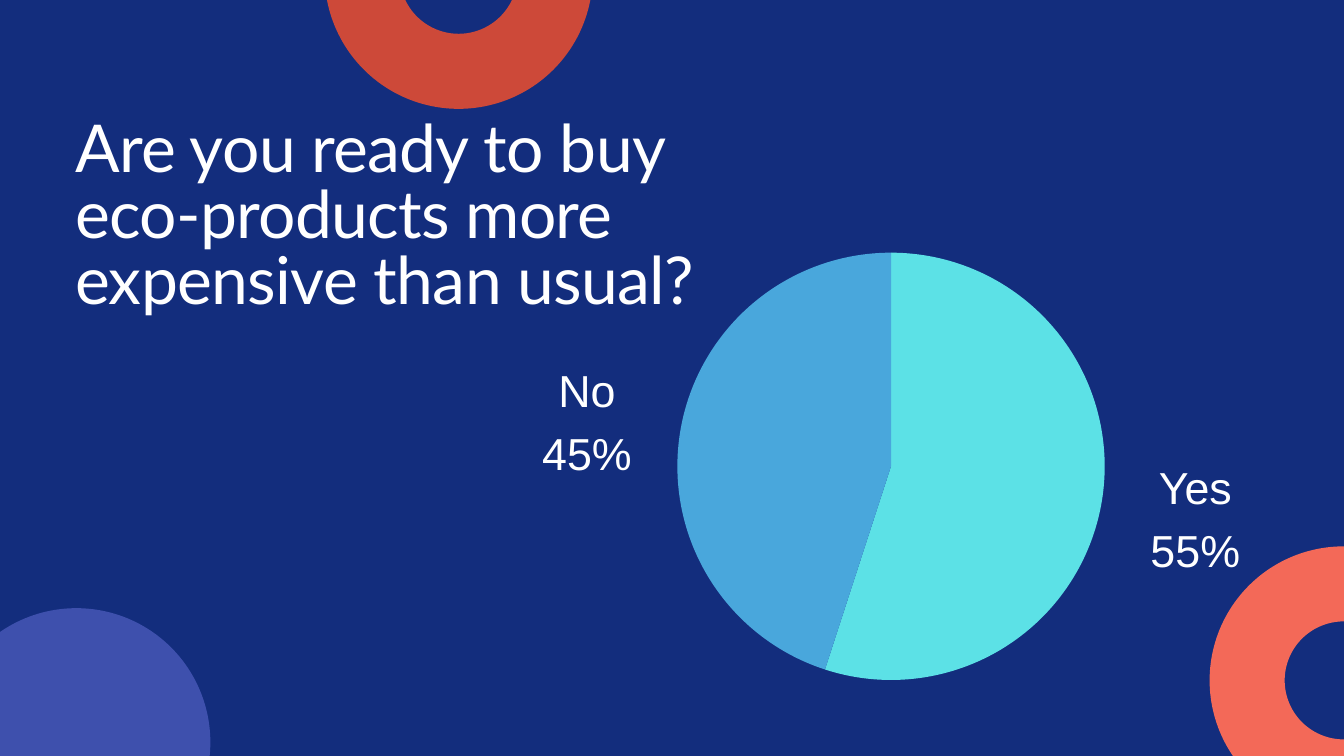
from dataclasses import dataclass
from typing import Any

from lxml.etree import SubElement
from pptx import Presentation
from pptx.chart.data import CategoryChartData
from pptx.dml.color import RGBColor
from pptx.enum.chart import XL_CHART_TYPE
from pptx.enum.shapes import MSO_SHAPE
from pptx.enum.text import MSO_ANCHOR, MSO_AUTO_SIZE, PP_ALIGN
from pptx.oxml.ns import qn
from pptx.util import Inches, Pt

COLORS = {
    "navy": "132D7D",
    "white": "FFFFFF",
    "aqua": "5CE1E6",
    "blue": "49A7DC",
    "brick": "CD4939",
    "coral": "F36958",
    "indigo": "3E50AD",
}
COLS, ROWS = 80, 45  # square grid over the slide
RING_WIDTH = 0.28    # share of the ring's diameter


@dataclass
class Box:
    col: float
    row: float
    cols: float
    rows: float


@dataclass
class Answer:
    name: str
    share: float
    color: str
    box: Box


@dataclass
class Ornament:
    kind: MSO_SHAPE
    color: str
    box: Box


ANSWERS = [
    Answer("Yes", 0.55, "aqua", Box(68.35, 26.84, 5.6, 7.24)),
    Answer("No", 0.45, "blue", Box(32.14, 21.08, 5.6, 7.24)),
]
ORNAMENTS = [
    Ornament(MSO_SHAPE.DONUT, "brick", Box(19.32, -9.48, 15.96, 15.96)),
    Ornament(MSO_SHAPE.DONUT, "coral", Box(72, 32.52, 15.96, 15.96)),
    Ornament(MSO_SHAPE.OVAL, "indigo", Box(-3.44, 36.2, 15.96, 15.96)),
]
TITLE = "Are you ready to buy eco-products more expensive than usual?"
TITLE_BOX = Box(4.48, 7.12, 40, 16.04)
PIE_BOX = Box(40.32, 15.04, 25.44, 25.44)

FRAME_FORMAT = {
    "margin_left": 0, "margin_top": 0, "margin_right": 0, "margin_bottom": 0,
    "word_wrap": True, "auto_size": MSO_AUTO_SIZE.NONE,
    "vertical_anchor": MSO_ANCHOR.TOP,
}
TITLE_FONT = {"name": "Lato", "size": Pt(70.7)}
LABEL_FONT = {"name": "Arial", "size": Pt(48)}

prs = Presentation()
prs.slide_width, prs.slide_height = Inches(20), Inches(11.25)


def rgb(name: str) -> RGBColor:
    return RGBColor.from_string(COLORS[name])


def apply(target: Any, values: dict) -> None:
    for key, value in values.items():
        setattr(target, key, value)


def place(box: Box) -> tuple[int, int, int, int]:
    w, h = prs.slide_width / COLS, prs.slide_height / ROWS
    return int(box.col * w), int(box.row * h), int(box.cols * w), int(box.rows * h)


def write(sp: Any, lines: list[str], font: dict, align: PP_ALIGN, spacing: Pt) -> None:
    tf = sp.text_frame
    apply(tf, FRAME_FORMAT)
    for i, line in enumerate(lines):
        p = tf.add_paragraph() if i else tf.paragraphs[0]
        apply(p, {"alignment": align, "line_spacing": spacing})
        r = p.add_run()
        r.text = line
        apply(r.font, font)
        r.font.color.rgb = rgb("white")


def draw_ornament(s: Any, item: Ornament) -> None:
    sp = s.shapes.add_shape(item.kind, *place(item.box))
    sp.shadow.inherit = False
    sp.fill.solid()
    sp.fill.fore_color.rgb = rgb(item.color)
    sp.line.fill.background()
    if item.kind == MSO_SHAPE.DONUT:
        sp.adjustments[0] = RING_WIDTH


def draw_pie(s: Any, answers: list[Answer], box: Box) -> None:
    data = CategoryChartData(number_format="0%")
    data.categories = [a.name for a in answers]
    data.add_series("Answers", [a.share for a in answers])
    chart = s.shapes.add_chart(XL_CHART_TYPE.PIE, *place(box), data).chart
    apply(chart, {"has_legend": False, "has_title": False})
    apply(chart.font, LABEL_FONT)
    for i, answer in enumerate(answers):
        fmt = chart.plots[0].series[0].points[i].format
        fmt.fill.solid()
        fmt.fill.fore_color.rgb = rgb(answer.color)
        fmt.line.fill.background()

    # Let the pie fill the whole chart frame
    area = chart.plots[0]._element.getparent()
    for old in area.findall(qn("c:layout")):
        area.remove(old)
    layout = SubElement(area, qn("c:layout"))
    area.insert(0, layout)
    manual = SubElement(layout, qn("c:manualLayout"))
    settings = {"layoutTarget": "inner", "xMode": "edge", "yMode": "edge",
                "x": "0", "y": "0", "w": "1", "h": "1"}
    for tag, value in settings.items():
        SubElement(manual, qn(f"c:{tag}")).set("val", value)


def main() -> None:
    s = prs.slides.add_slide(prs.slide_layouts[5])
    s.background.fill.solid()
    s.background.fill.fore_color.rgb = rgb("navy")

    # Pie and its labels
    draw_pie(s, ANSWERS, PIE_BOX)
    for answer in ANSWERS:
        sp = s.shapes.add_textbox(*place(answer.box))
        write(sp, [answer.name, f"{answer.share:.0%}"], LABEL_FONT,
              PP_ALIGN.CENTER, Pt(67.2))

    # Question
    title = s.shapes.title
    apply(title, dict(zip(("left", "top", "width", "height"), place(TITLE_BOX))))
    write(title, [TITLE], TITLE_FONT, PP_ALIGN.LEFT, Pt(70.7))
    title.text_frame.paragraphs[0].runs[0].font._element.set("spc", "-70")

    # Rings and disc at the edges
    for item in ORNAMENTS:
        draw_ornament(s, item)

    prs.save("out.pptx")


if __name__ == "__main__":
    main()
